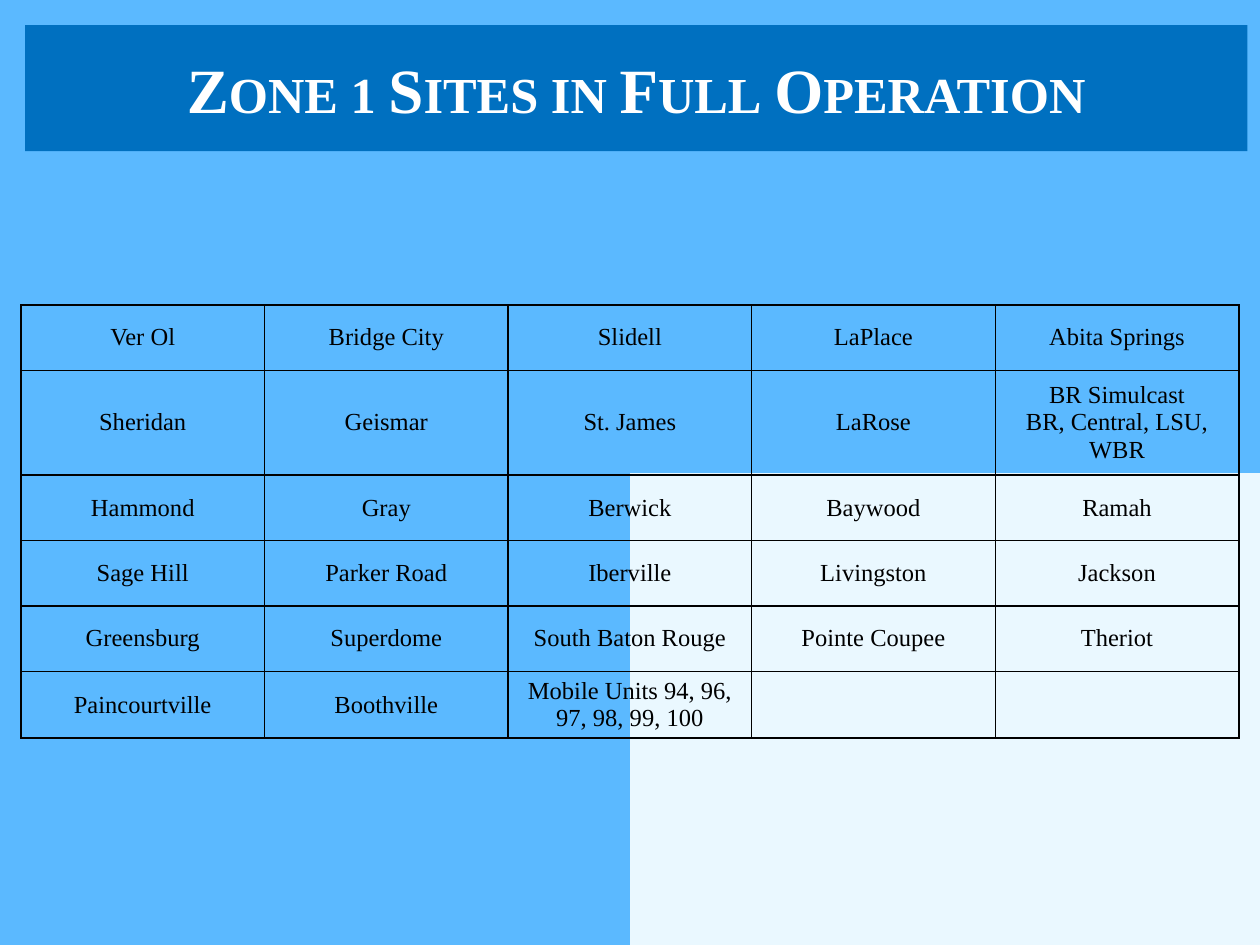
import pptx
import pptx.util
import pptx.dml.color
import pptx.enum.shapes
import pptx.enum.text
import pptx.oxml
import pptx.oxml.ns

WIDTH, HEIGHT = pptx.util.Inches(10), pptx.util.Inches(7.5)
FONT = "Times New Roman"
COLORS = {
    "sky": "5BB9FF",
    "pale": "EAF8FF",
    "banner": "0070C0",
    "white": "FFFFFF",
    "black": "000000",
}
SITES = [
    ["Ver Ol", "Bridge City", "Slidell", "LaPlace", "Abita Springs"],
    ["Sheridan", "Geismar", "St. James", "LaRose", "BR Simulcast\nBR, Central, LSU, WBR"],
    ["Hammond", "Gray", "Berwick", "Baywood", "Ramah"],
    ["Sage Hill", "Parker Road", "Iberville", "Livingston", "Jackson"],
    ["Greensburg", "Superdome", "South Baton Rouge", "Pointe Coupee", "Theriot"],
    ["Paincourtville", "Boothville", "Mobile Units 94, 96, 97, 98, 99, 100", "", ""],
]
ROW_HEIGHT, TALL_ROW_HEIGHT = 0.52, 0.83
TALL_ROW = 1


def rgb(name):
    return pptx.dml.color.RGBColor.from_string(COLORS[name])


def share(x, y, w, h):
    return int(WIDTH * x), int(HEIGHT * y), int(WIDTH * w), int(HEIGHT * h)


def add_run(p, text, size, color, bold=False):
    p.alignment = pptx.enum.text.PP_ALIGN.CENTER
    r = p.add_run()
    r.text = text
    r.font.name = FONT
    r.font.size = pptx.util.Pt(size)
    r.font.bold = bold
    r.font.color.rgb = rgb(color)
    return r


def set_background(s):
    s.background.fill.solid()
    bg = s.element.find(".//" + pptx.oxml.ns.qn("p:bgPr"))
    stops = "".join(
        f'<a:gs pos="100000"><a:srgbClr val="{COLORS[name]}"/></a:gs>'
        for name in ("pale", "white", "sky")
    )
    grad = pptx.oxml.parse_xml(
        f'<a:gradFill {pptx.oxml.ns.nsdecls("a")}><a:gsLst>{stops}</a:gsLst>'
        '<a:path path="rect"><a:fillToRect l="100000" t="100000"/></a:path>'
        "</a:gradFill>"
    )
    bg.replace(bg[0], grad)


def set_borders(cell):
    props = cell._tc.get_or_add_tcPr()
    for i, side in enumerate(("lnL", "lnR", "lnT", "lnB")):
        line = pptx.oxml.parse_xml(
            f'<a:{side} {pptx.oxml.ns.nsdecls("a")} w="{pptx.util.Pt(1)}">'
            f'<a:solidFill><a:srgbClr val="{COLORS["black"]}"/></a:solidFill>'
            f"</a:{side}>"
        )
        props.insert(i, line)


def fill_cell(cell, text):
    cell.fill.background()
    cell.vertical_anchor = pptx.enum.text.MSO_ANCHOR.MIDDLE
    set_borders(cell)
    tf = cell.text_frame
    for i, line in enumerate(text.splitlines()):
        p = tf.add_paragraph() if i else tf.paragraphs[0]
        add_run(p, line, 14, "black")


def add_site_table(s, box):
    table = s.shapes.add_table(len(SITES), len(SITES[0]), *box).table
    table.first_row = table.horz_banding = False
    for i, names in enumerate(SITES):
        height = TALL_ROW_HEIGHT if i == TALL_ROW else ROW_HEIGHT
        table.rows[i].height = pptx.util.Inches(height)
        for j, name in enumerate(names):
            fill_cell(table.cell(i, j), name)


def add_banner(s, text, box):
    sp = s.shapes.add_shape(pptx.enum.shapes.MSO_SHAPE.RECTANGLE, *box)
    sp.shadow.inherit = False
    sp.fill.solid()
    sp.fill.fore_color.rgb = rgb("banner")
    sp.line.fill.background()
    tf = sp.text_frame
    tf.word_wrap = True
    tf.vertical_anchor = pptx.enum.text.MSO_ANCHOR.MIDDLE
    r = add_run(tf.paragraphs[0], text, 36, "white", bold=True)
    r.font._element.set("cap", "small")


def main():
    prs = pptx.Presentation()
    prs.slide_width, prs.slide_height = WIDTH, HEIGHT
    s = prs.slides.add_slide(prs.slide_layouts[6])
    set_background(s)
    add_site_table(s, share(1 / 60, 2.42 / 7.5, 29 / 30, 3.43 / 7.5))
    add_banner(s, "Zone 1 Sites in Full Operation", share(0.02, 0.2 / 7.5, 0.97, 1 / 7.5))
    prs.save("out.pptx")


if __name__ == "__main__":
    main()
